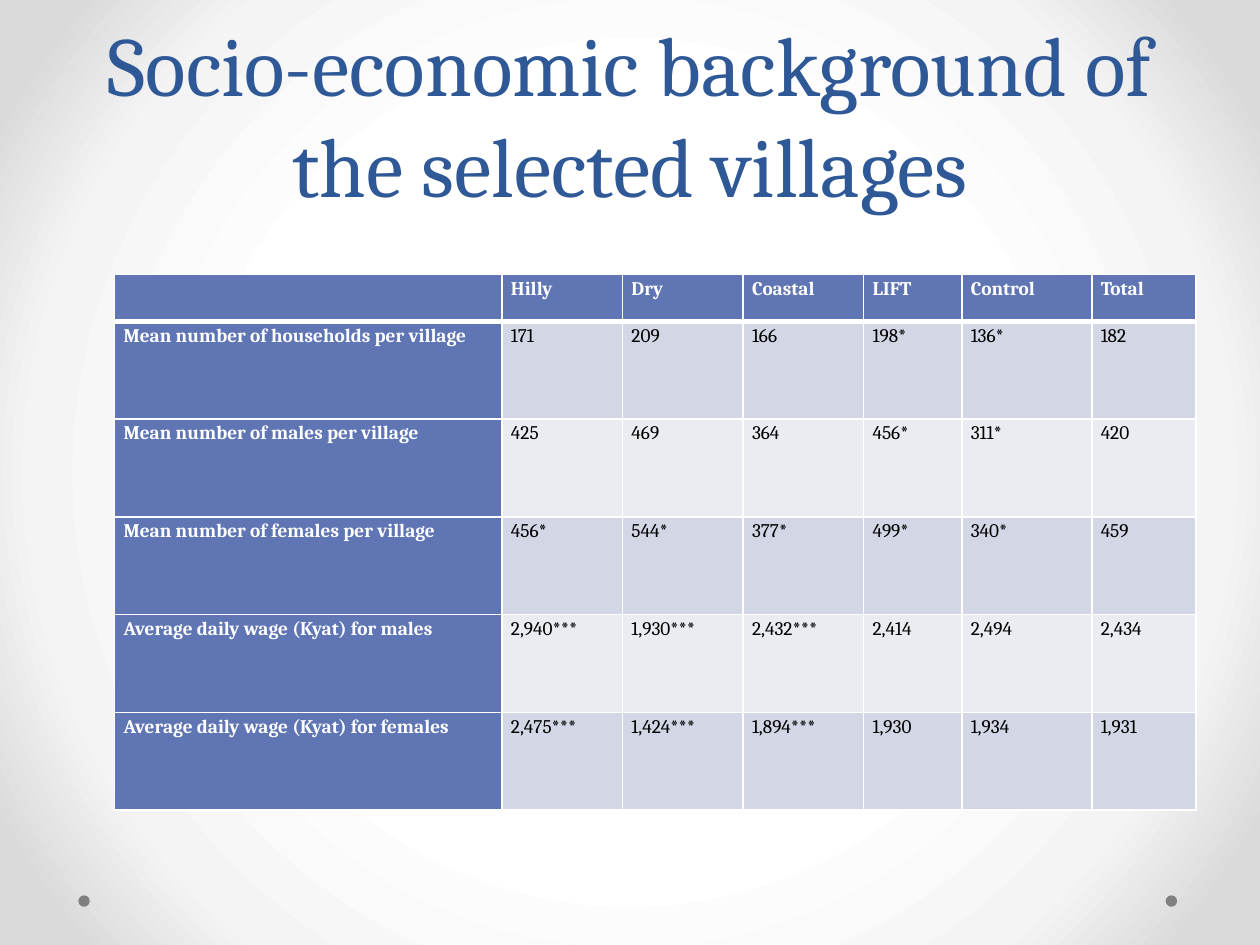
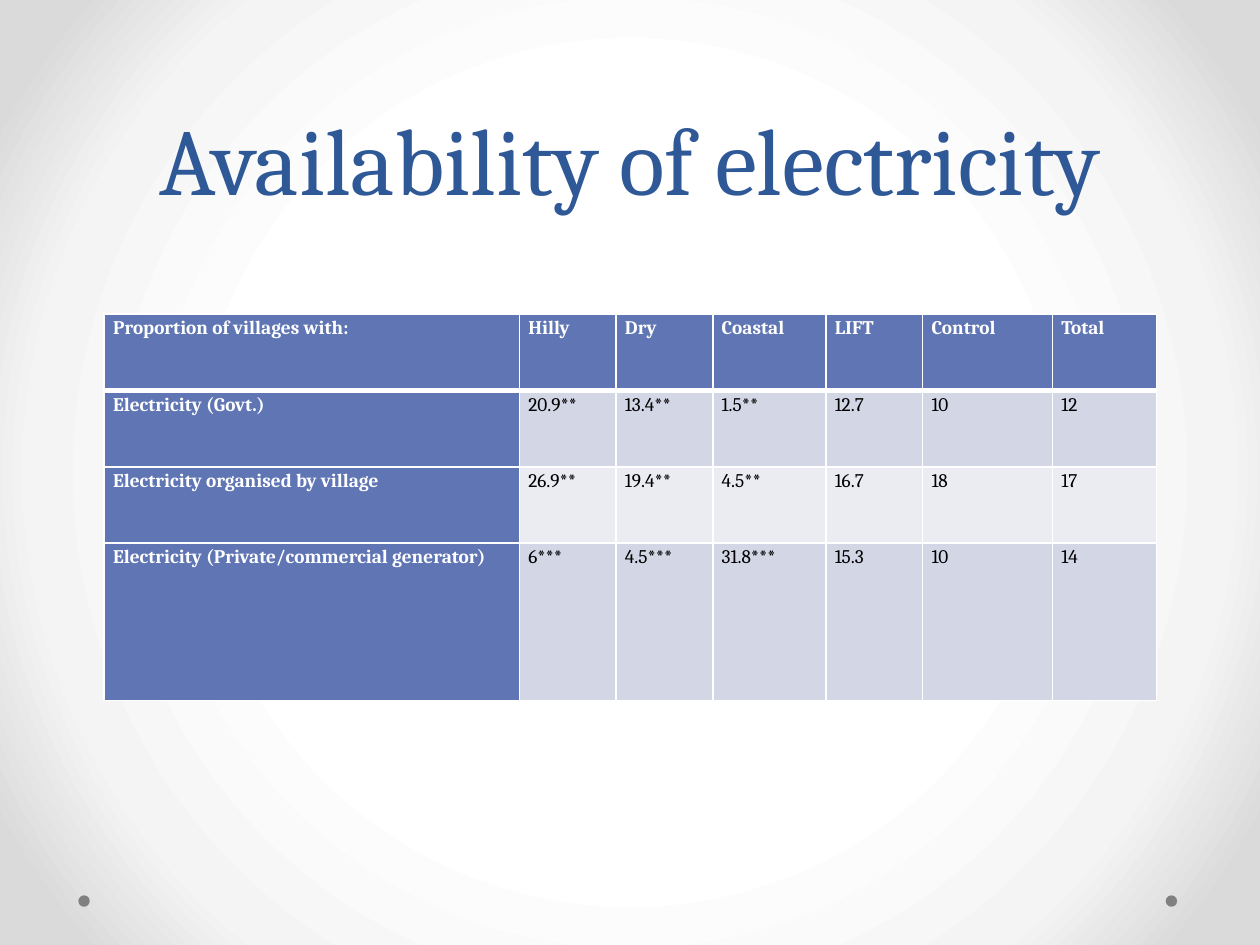
from lxml import etree
from pptx import Presentation
from pptx.dml.color import RGBColor as RGB
from pptx.enum.shapes import MSO_SHAPE as Shape
from pptx.enum.text import MSO_ANCHOR as Anchor, MSO_AUTO_SIZE as Fit, PP_ALIGN as Align
from pptx.oxml import parse_xml
from pptx.oxml.ns import qn
from pptx.util import Cm, Pt

# Shared look
HUES = {"title": "2F5897", "head": "6076B4", "odd": "D2D6E5", "even": "EAECF2",
        "dot": "808080", "light": "FFFFFF", "dark": "000000",
        "mist": "F4F4F4", "edge": "DADADA"}
FONT = "Cambria"
NS = "http://schemas.openxmlformats.org/{}/2006/main"
ZONES = ["Hilly", "Dry", "Coastal", "LIFT", "Control", "Total"]
FRAME = {"word_wrap": True, "auto_size": Fit.NONE, "vertical_anchor": Anchor.BOTTOM}
TITLE = {"alignment": Align.CENTER, "line_spacing": Pt(58)}
BODY = {"line_spacing": 1.15, "space_before": Pt(6), "space_after": Pt(6)}
CELL = {"margin_left": Cm(0.18), "margin_right": Cm(0.18),
        "margin_top": 0, "margin_bottom": 0}

# What each slide holds
PAGES = [
    {"title": "Socio-economic background of the selected villages", "size": 48,
     "left": 2.31, "top": 5.53,
     "cols": [7.81, 2.43, 2.43, 2.43, 1.98, 2.62, 2.1],
     "rows": [0.95] + [1.97] * 5,
     "data": [
         ["", *ZONES],
         ["Mean number of households per village", "171", "209", "166", "198*", "136*", "182"],
         ["Mean number of males per village", "425", "469", "364", "456*", "311*", "420"],
         ["Mean number of females per village", "456*", "544*", "377*", "499*", "340*", "459"],
         ["Average daily wage (Kyat) for males",
          "2,940***", "1,930***", "2,432***", "2,414", "2,494", "2,434"],
         ["Average daily wage (Kyat) for females",
          "2,475***", "1,424***", "1,894***", "1,930", "1,934", "1,931"]]},
    {"title": "Availability of electricity", "size": 54,
     "left": 2.1, "top": 6.33,
     "cols": [8.37, 1.95, 1.95, 2.28, 1.95, 2.62, 2.1],
     "rows": [1.54] * 3 + [3.17],
     "data": [
         ["Proportion of villages with:", *ZONES],
         ["Electricity (Govt.)", "20.9**", "13.4**", "1.5**", "12.7", "10", "12"],
         ["Electricity organised by village", "26.9**", "19.4**", "4.5**", "16.7", "18", "17"],
         ["Electricity (Private/commercial generator)",
          "6***", "4.5***", "31.8***", "15.3", "10", "14"]]},
]


def style(text, size, hue, bold=False):
    form = {"name": FONT, "size": Pt(size), "bold": bold}
    for key, val in form.items():
        setattr(text.font, key, val)
    text.font.color.rgb = RGB.from_string(HUES[hue])


def edge(cell, side, width):
    line = etree.SubElement(cell._tc.get_or_add_tcPr(), qn("a:ln" + side), w=str(Pt(width)))
    fill = etree.SubElement(line, qn("a:solidFill"))
    etree.SubElement(fill, qn("a:srgbClr"), val=HUES["light"])


deck = Presentation()
deck.slide_width, deck.slide_height = Cm(25.4), Cm(19.05)
master = deck.slide_master

# Round gradient behind every slide
stops = "".join(f'<a:gs pos="{pos}000"><a:srgbClr val="{HUES[hue]}"/></a:gs>'
                for pos, hue in [(50, "light"), (76, "mist"), (92, "edge")])
base = master._element.cSld
base.remove(base.bg)
base.insert(0, parse_xml(
    f'<p:bg xmlns:p="{NS.format("presentationml")}" xmlns:a="{NS.format("drawingml")}">'
    f'<p:bgPr><a:gradFill rotWithShape="1"><a:gsLst>{stops}</a:gsLst><a:path path="circle">'
    '<a:fillToRect l="50000" t="50000" r="50000" b="50000"/></a:path></a:gradFill>'
    '<a:effectLst/></p:bgPr></p:bg>'))

for num, page in enumerate(PAGES):
    slide = deck.slides.add_slide(deck.slide_layouts[5])

    # Footer dots, moved to the master so that all slides share them
    if num == 0:
        for tag, left in enumerate([23.5, 1.58], 20):
            dot = slide.shapes.add_shape(Shape.OVAL, Cm(left), Cm(18.05), Cm(0.23), Cm(0.23))
            dot.shadow.inherit = False
            dot.fill.solid()
            dot.fill.fore_color.rgb = RGB.from_string(HUES["dot"])
            dot.line.fill.background()
            dot._element.nvSpPr.cNvPr.set("id", str(tag))
            master.shapes._spTree.append(dot._element)

    # Title
    head = slide.shapes.title
    head.left, head.top, head.width, head.height = Cm(1.27), 0, Cm(22.86), Cm(4.45)
    head.text = page["title"]
    for key, val in FRAME.items():
        setattr(head.text_frame, key, val)
    para = head.text_frame.paragraphs[0]
    for key, val in TITLE.items():
        setattr(para, key, val)
    style(para.runs[0], page["size"], "title")

    # Table
    cols, rows = page["cols"], page["rows"]
    grid = slide.shapes.add_table(len(rows), len(cols), Cm(page["left"]), Cm(page["top"]),
                                  Cm(sum(cols)), Cm(sum(rows))).table
    for col, width in zip(grid.columns, cols):
        col.width = Cm(width)
    for row, height in zip(grid.rows, rows):
        row.height = Cm(height)

    for i, row in enumerate(page["data"]):
        for j, text in enumerate(row):
            cell = grid.cell(i, j)
            label = i == 0 or j == 0
            for key, val in CELL.items():
                setattr(cell, key, val)
            for side in "LRTB":
                thick = (i, side) in [(0, "B"), (1, "T")]
                edge(cell, side, 3 if thick else 1)
            cell.fill.solid()
            band = "head" if label else "odd" if i % 2 else "even"
            cell.fill.fore_color.rgb = RGB.from_string(HUES[band])
            if text:
                cell.text = text
                para = cell.text_frame.paragraphs[0]
                for key, val in BODY.items():
                    setattr(para, key, val)
                style(para.runs[0], 11, "light" if label else "dark", label)

deck.save("out.pptx")
